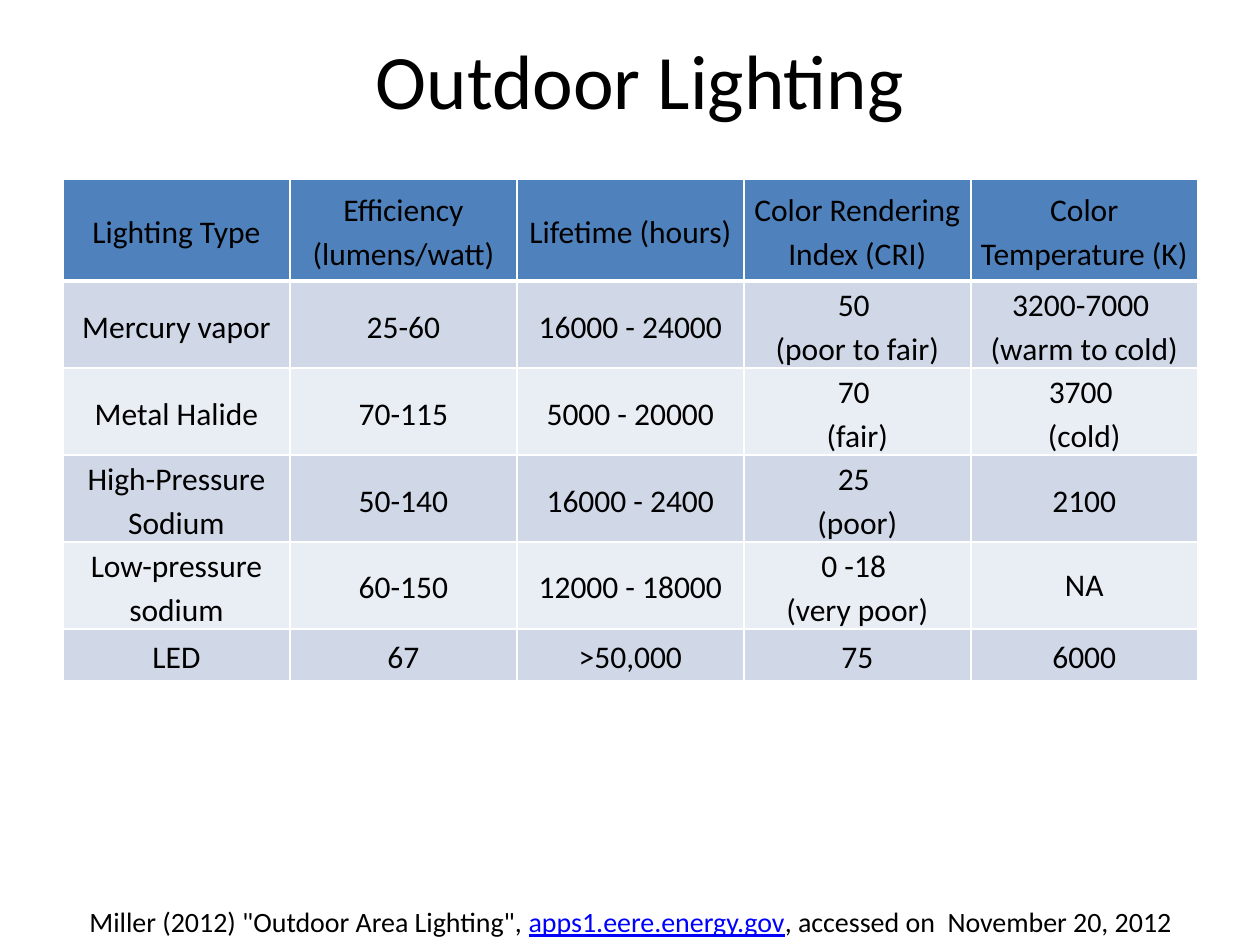
"""Build a slide comparing outdoor lighting types."""
import lxml.etree
import pptx
import pptx.dml.color
import pptx.enum.text
import pptx.oxml.ns
import pptx.util

EMU_PER_PX = 914400 // 126
MIDDLE = pptx.enum.text.MSO_ANCHOR.MIDDLE

HEADINGS = ["Lighting Type", "Efficiency (lumens/watt)", "Lifetime (hours)",
            "Color Rendering Index (CRI)", "Color Temperature (K)"]
LAMPS = [
    ["Mercury vapor", "25-60", "16000 - 24000", "50 \n(poor to fair)", "3200-7000 \n(warm to cold)"],
    ["Metal Halide", "70-115", "5000 - 20000", "70 \n(fair)", "3700 \n(cold)"],
    ["High-Pressure Sodium", "50-140", "16000 - 2400", "25 \n(poor)", "2100"],
    ["Low-pressure sodium", "60-150", "12000 - 18000", "0 -18 \n(very poor)", "NA"],
    ["LED", "67", ">50,000", "75", "6000"],
]
CITATION = [
    ("\N{NO-BREAK SPACE}", {"bold": True}),
    ('Miller (2012) "Outdoor Area Lighting", ', {}),
    ("apps1.eere.energy.gov", {"color": "0000FF", "underline": True}),
    (", accessed on  November 20, 2012", {}),
]


def px(length):
    return pptx.util.Emu(length * EMU_PER_PX)


def rgb(code):
    return pptx.dml.color.RGBColor.from_string(code)


def add_text(paragraph, text, size=18, color="000000", bold=False, underline=False):
    run = paragraph.add_run()
    run.text = text
    run.font.name = "Calibri"
    run.font.size = pptx.util.Pt(size)
    run.font.color.rgb = rgb(color)
    run.font.bold = bold
    run.font.underline = underline


def add_border(cell, side, points, color="FFFFFF"):
    width = str(pptx.util.Pt(points))
    edge = lxml.etree.SubElement(cell._tc.get_or_add_tcPr(), pptx.oxml.ns.qn(f"a:ln{side}"), w=width)
    fill = lxml.etree.SubElement(edge, pptx.oxml.ns.qn("a:solidFill"))
    lxml.etree.SubElement(fill, pptx.oxml.ns.qn("a:srgbClr"), val=color)


class LightingSlide:
    center = pptx.enum.text.PP_ALIGN.CENTER
    header_fill = "4F81BD"
    band_fills = ("E9EDF4", "D0D8E8")

    def __init__(self, slide):
        self.slide = slide

    def text_line(self, left, top, width, height, runs, size, anchor):
        frame = self.slide.shapes.add_textbox(px(left), px(top), px(width), px(height)).text_frame
        frame.word_wrap = True
        frame.vertical_anchor = anchor
        line = frame.paragraphs[0]
        line.alignment = self.center
        for text, style in runs:
            add_text(line, text, size=size, **style)

    def table(self, left, top, column_width, heights, rows):
        grid = self.slide.shapes.add_table(
            len(rows), len(rows[0]), px(left), px(top),
            px(column_width * len(rows[0])), px(sum(heights))).table
        for column in grid.columns:
            column.width = px(column_width)
        for row_number, (height, texts) in enumerate(zip(heights, rows)):
            grid.rows[row_number].height = px(height)
            for column_number, text in enumerate(texts):
                self.cell(grid.cell(row_number, column_number), row_number, text)

    def cell(self, cell, row_number, text):
        top_width = 3 if row_number == 1 else 1
        bottom_width = 3 if row_number == 0 else 1
        for side, points in zip("LRTB", (1, 1, top_width, bottom_width)):
            add_border(cell, side, points)
        cell.fill.solid()
        cell.fill.fore_color.rgb = rgb(self.band_fills[row_number % 2] if row_number else self.header_fill)
        cell.vertical_anchor = MIDDLE
        cell.margin_left = cell.margin_right = px(9)
        cell.margin_top = cell.margin_bottom = 0
        for line_number, line in enumerate(text.split("\n")):
            frame = cell.text_frame
            paragraph = frame.add_paragraph() if line_number else frame.paragraphs[0]
            paragraph.alignment = self.center
            paragraph.line_spacing = 1.0 if text == "NA" else 1.15
            add_text(paragraph, line)


def main():
    deck = pptx.Presentation()
    deck.slide_width, deck.slide_height = px(1260), px(945)
    page = LightingSlide(deck.slides.add_slide(deck.slide_layouts[6]))
    page.text_line(73, 0, 1134, 158, [("Outdoor Lighting", {})], 44, MIDDLE)
    page.table(63, 179, 227, [102] + [52] * len(LAMPS), [HEADINGS] + LAMPS)
    page.text_line(-5, 898, 1265, 47, CITATION, 16, pptx.enum.text.MSO_ANCHOR.TOP)
    deck.save("out.pptx")


if __name__ == "__main__":
    main()
